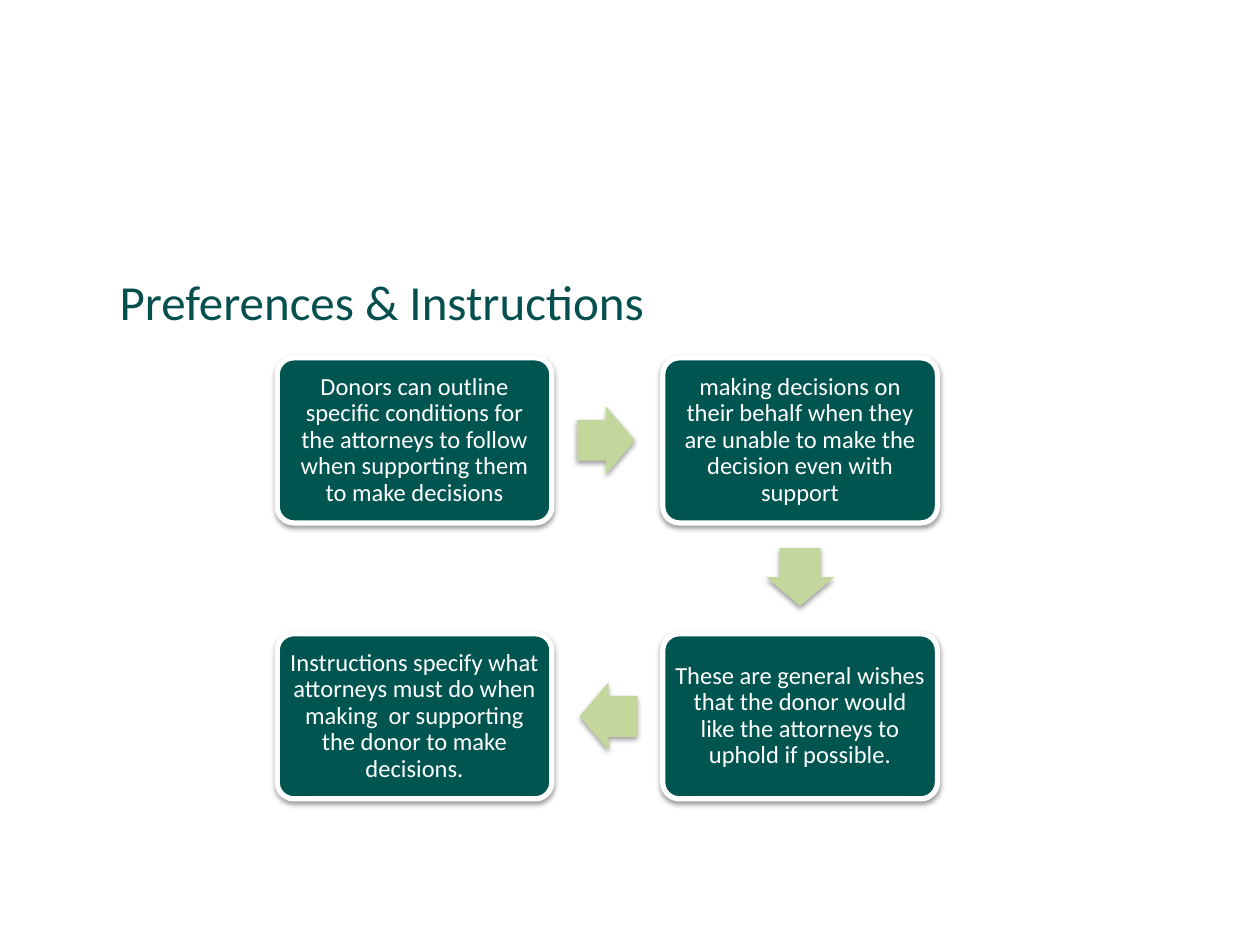
from dataclasses import dataclass

from lxml.etree import SubElement
from pptx import Presentation
from pptx.dml.color import RGBColor
from pptx.enum.shapes import MSO_SHAPE
from pptx.enum.text import MSO_ANCHOR, MSO_AUTO_SIZE, PP_ALIGN
from pptx.oxml.ns import qn
from pptx.util import Inches, Pt


@dataclass(frozen=True)
class Theme:
    font: str = "Calibri"
    title_size: int = 28
    step_size: int = 14
    title: str = "054F4E"
    step: str = "005551"
    arrow: str = "C3D69B"
    light: str = "FFFFFF"
    shadow: str = "000000"


THEME = Theme()

# Grid of steps, in inches
LEFT, TOP = 2.2, 2.84
STEP_WIDTH, STEP_HEIGHT, GAP = 2.18, 1.31, 0.88
ARROW_LENGTH, ARROW_WIDTH = 0.46, 0.54
ARROW_LAG = 0.01

# Column, row and wording, in reading order of the flow
STEPS = [
    (0, 0, "Donors can outline specific conditions for the attorneys to follow "
           "when supporting them to make decisions"),
    (1, 0, "making decisions on their behalf when they are unable to make the "
           "decision even with support"),
    (1, 1, "These are general wishes that the donor would like the attorneys to "
           "uphold if possible."),
    (0, 1, "Instructions specify what attorneys must do when making  or "
           "supporting the donor to make decisions."),
]
ROTATIONS = {(1, 0): 0, (0, 1): 90, (-1, 0): 180}


def set_values(target, values):
    for name, value in values.items():
        setattr(target, name, value)


def write(frame, text, size, color, align, **frame_format):
    set_values(frame, {"word_wrap": True, "vertical_anchor": MSO_ANCHOR.MIDDLE,
                       **frame_format})
    para = frame.paragraphs[0]
    para.alignment = align
    span = para.add_run()
    span.text = text
    set_values(span.font, {"name": THEME.font, "size": Pt(size)})
    span.font.color.rgb = RGBColor.from_string(color)
    return para


def add_soft_shadow(shape):
    """Put a faint shadow straight below the shape, whatever its rotation."""
    shape.shadow.inherit = False
    effects = shape._element.spPr.find(qn("a:effectLst"))
    shadow = SubElement(effects, qn("a:outerShdw"), blurRad=str(Pt(3.1)),
                        dist=str(Pt(1.6)), dir="5400000", rotWithShape="0")
    color = SubElement(shadow, qn("a:srgbClr"), val=THEME.shadow)
    SubElement(color, qn("a:alpha"), val="38000")


def add_filled_shape(page, kind, bounds, color, adjustments):
    shape = page.shapes.add_shape(kind, *map(Inches, bounds))
    for index, value in enumerate(adjustments):
        shape.adjustments[index] = value
    shape.fill.solid()
    shape.fill.fore_color.rgb = RGBColor.from_string(color)
    shape.line.fill.background()
    add_soft_shadow(shape)
    return shape


def step_corner(column, row):
    return LEFT + column * (STEP_WIDTH + GAP), TOP + row * (STEP_HEIGHT + GAP)


def add_step(page, column, row, text):
    bounds = (*step_corner(column, row), STEP_WIDTH, STEP_HEIGHT)
    box = add_filled_shape(page, MSO_SHAPE.ROUNDED_RECTANGLE, bounds,
                           THEME.step, [0.1])
    box.line.color.rgb = RGBColor.from_string(THEME.light)
    box.line.width = Pt(3)
    sides = ("left", "top", "right", "bottom")
    margins = {f"margin_{side}": Inches(0.06) for side in sides}
    para = write(box.text_frame, text, THEME.step_size, THEME.light,
                 PP_ALIGN.CENTER, **margins)
    para.line_spacing = 0.9


def add_arrow(page, start, end):
    """Point from one grid cell to the next, set slightly back from mid-gap."""
    across, down = end[0] - start[0], end[1] - start[1]
    (x1, y1), (x2, y2) = step_corner(*start), step_corner(*end)
    center_x = (x1 + x2 + STEP_WIDTH) / 2 - across * ARROW_LAG
    center_y = (y1 + y2 + STEP_HEIGHT) / 2 - down * ARROW_LAG
    bounds = (center_x - ARROW_LENGTH / 2, center_y - ARROW_WIDTH / 2,
              ARROW_LENGTH, ARROW_WIDTH)
    arrow = add_filled_shape(page, MSO_SHAPE.RIGHT_ARROW, bounds,
                             THEME.arrow, [0.6, 0.5])
    arrow.rotation = ROTATIONS[across, down]


def add_title(page, text):
    title = page.shapes.title
    set_values(title, {"left": Inches(0.85), "top": Inches(1.76),
                       "width": Inches(8.12), "height": Inches(1.25)})
    write(title.text_frame, text, THEME.title_size, THEME.title,
          PP_ALIGN.LEFT, auto_size=MSO_AUTO_SIZE.NONE)


def main():
    deck = Presentation()
    deck.slide_width, deck.slide_height = Inches(10), Inches(7.5)
    page = deck.slides.add_slide(deck.slide_layouts[5])
    add_title(page, "Preferences & Instructions")
    for column, row, text in STEPS:
        add_step(page, column, row, text)
    for start, end in zip(STEPS, STEPS[1:]):
        add_arrow(page, start[:2], end[:2])
    deck.save("out.pptx")


if __name__ == "__main__":
    main()
